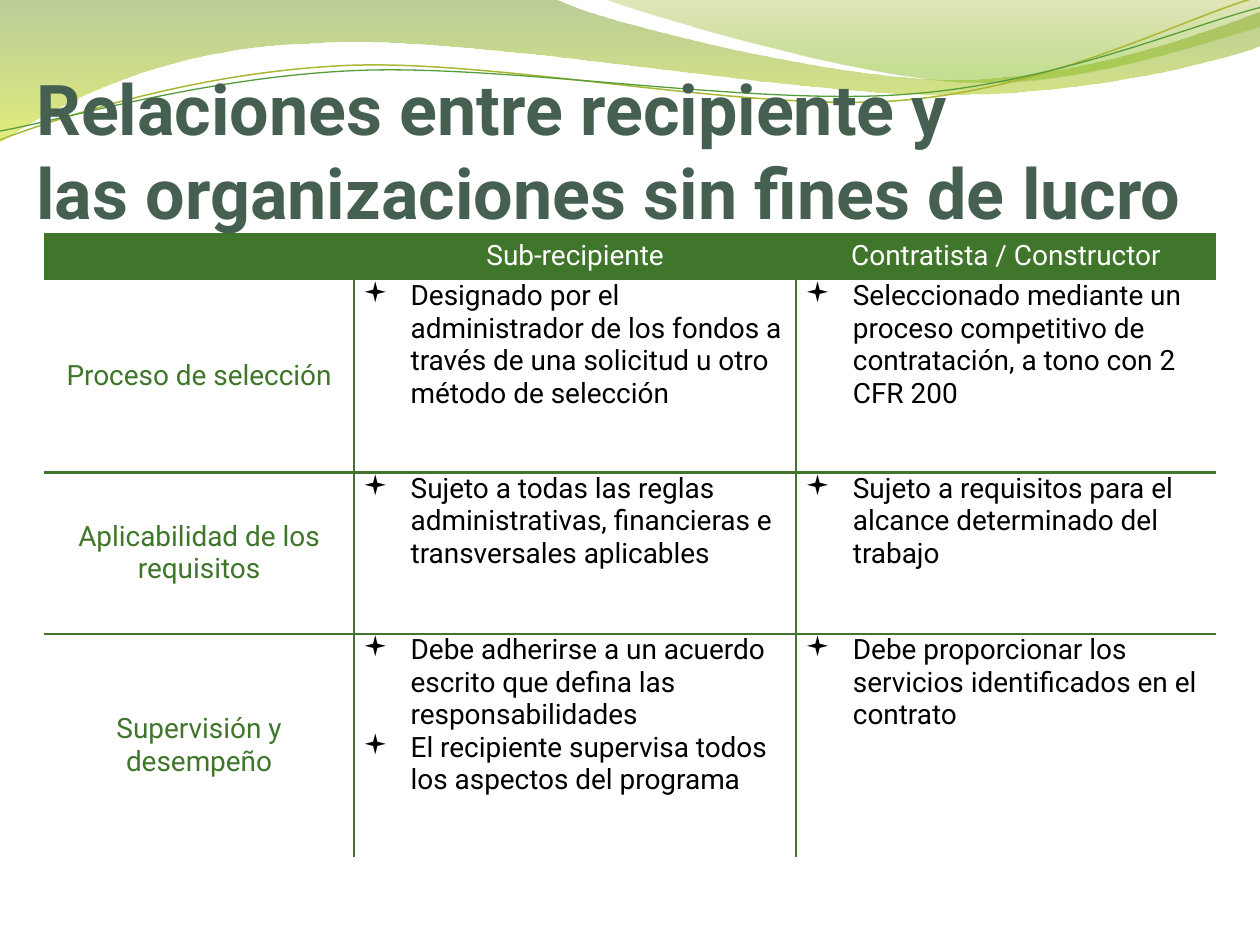
from lxml.etree import SubElement as Sub
from pptx import Presentation
from pptx.dml.color import RGBColor
from pptx.enum.text import MSO_ANCHOR as Anchor, PP_ALIGN as Align
from pptx.oxml import parse_xml
from pptx.oxml.ns import nsdecls, qn
from pptx.util import Inches, Pt

FONT, GREEN = "Roboto", "3F762B"
TITLE = "Relaciones entre recipiente y\vlas organizaciones sin fines de lucro"
HEAD = ["", "Sub-recipiente", "Contratista / Constructor"]
ROWS = [
    ("Proceso de selección",
     ["Designado por el administrador de los fondos a través de una solicitud u otro método de selección"],
     ["Seleccionado mediante un proceso competitivo de contratación, a tono con 2 CFR 200"]),
    ("Aplicabilidad de los requisitos",
     ["Sujeto a todas las reglas administrativas, financieras e transversales aplicables"],
     ["Sujeto a requisitos para el alcance determinado del trabajo"]),
    ("Supervisión y desempeño",
     ["Debe adherirse a un acuerdo escrito que defina las responsabilidades",
      "El recipiente supervisa todos los aspectos del programa"],
     ["Debe proporcionar los servicios identificados en el contrato"]),
]
WIDTHS = [2.46, 3.51, 3.33]
HEIGHTS = [0.37, 1.53, 1.28, 1.77]
NO_GRID = "{2D5ABB26-0587-4C30-8999-92F81FD0307C}"

BANDS = [
    ([(0, 0), (4.4, -0.01), (4.75, 0.17, 6.63, 0.63, 7.58, 0.63),
      (8.53, 0.63, 9.58, 0.26, 10, 0.09), (10.01, 0.36),
      (9.83, 0.44, 8.69, 0.76, 7.46, 0.75), (6.22, 0.75, 3.81, 0.28, 2.57, 0.34),
      (1.29, 0.36, 0.46, 0.83, -0.01, 1.13)],
     [(0, "69921C", 45), (1, "CCE10F", 55)]),
    ([(4.79, -0.01), (5.09, 0.11, 6.82, 0.62, 7.68, 0.65),
      (8.55, 0.69, 9.61, 0.32, 10, 0.21), (10, 0)],
     [(0, "9BAA1A", 30), (0.8, "81BA16", 45)]),
]
WAVES = [
    ([(0, 1.11), (0.48, 0.93, 1.57, 0.57, 2.76, 0.52),
      (3.95, 0.47, 5.92, 0.89, 7.12, 0.8), (8.33, 0.71, 9.38, 0.15, 9.97, -0.02)],
     "A9B733", 0.85),
    ([(0, 1.04), (0.47, 0.96, 1.63, 0.61, 2.83, 0.56),
      (4.02, 0.51, 5.97, 0.84, 7.17, 0.75), (8.36, 0.67, 9.41, 0.21, 10, 0.06)],
     "549E39", 0.75),
]


def rgb(code):
    return RGBColor.from_string(code)


def outline(steps, close):
    dots = [(Inches(s[-2]), Inches(s[-1])) for s in steps]
    pen = slide.shapes.build_freeform(*dots[0], scale=1.0)
    pen.add_line_segments(dots[1:], close=close)
    shape = pen.convert_to_shape()
    shape.shadow.inherit = False
    lines = list(shape._element.iter(qn("a:lnTo")))
    for line, step in zip(lines, steps[1:]):
        if len(step) == 6:
            bend(shape, line, step)
    return shape


def bend(shape, line, step):
    line.tag = qn("a:cubicBezTo")
    for at in (0, 2):
        dot = line.makeelement(qn("a:pt"))
        dot.set("x", str(Inches(step[at]) - shape.left))
        dot.set("y", str(Inches(step[at + 1]) - shape.top))
        line.insert(at // 2, dot)


def style(para, size, color, bold=False):
    para.font.name, para.font.size, para.font.bold = FONT, Pt(size), bold
    para.font.color.rgb = rgb(color)


def bullet(para):
    props = para._p.get_or_add_pPr()
    props.set("marL", str(Inches(0.38)))
    props.set("indent", str(-Inches(0.38)))
    Sub(props, qn("a:buFont")).set("typeface", "Wingdings")
    Sub(props, qn("a:buChar")).set("char", "▪")


def border(cell, sides):
    props = cell._tc.get_or_add_tcPr()
    for at, side in enumerate(sides):
        props.insert(at, parse_xml(
            f'<a:ln{side} {nsdecls("a")} w="{Pt(1.5)}"><a:solidFill>'
            f'<a:srgbClr val="{GREEN}"/></a:solidFill></a:ln{side}>'))


def write(cell, items, color, listed=False):
    cell.margin_left = cell.margin_right = Inches(0.07)
    cell.margin_top = cell.margin_bottom = 0
    cell.vertical_anchor = Anchor.TOP if listed else Anchor.MIDDLE
    cell.text_frame.text = "\n".join(items)
    for para in cell.text_frame.paragraphs:
        if listed:
            bullet(para)
        else:
            para.alignment = Align.CENTER
        style(para, 16, color)


deck = Presentation()
deck.slide_width, deck.slide_height = Inches(10), Inches(7.5)
slide = deck.slides.add_slide(deck.slide_layouts[6])

for steps, stops in BANDS:
    band = outline(steps, True)
    band.line.fill.background()
    band.fill.gradient()
    band.fill.gradient_angle = 270
    for stop, (place, color, alpha) in zip(band.fill.gradient_stops, stops):
        stop.position = place
        stop.color.rgb = rgb(color)
    tints = band._element.spPr.iter(qn("a:srgbClr"))
    for tint, (place, color, alpha) in zip(tints, stops):
        Sub(tint, qn("a:alpha")).set("val", str(alpha * 1000))

for steps, color, width in WAVES:
    wave = outline(steps, False)
    wave.fill.background()
    wave.line.color.rgb = rgb(color)
    wave.line.width = Pt(width)

frame = slide.shapes.add_table(
    len(HEIGHTS), len(WIDTHS), Inches(0.35), Inches(1.85),
    Inches(sum(WIDTHS)), Inches(sum(HEIGHTS)))
table = frame.table
table.first_row = table.horz_banding = False
table._tbl.tblPr.find(qn("a:tableStyleId")).text = NO_GRID
for col, width in zip(table.columns, WIDTHS):
    col.width = Inches(width)
for row, height in zip(table.rows, HEIGHTS):
    row.height = Inches(height)

for c, label in enumerate(HEAD):
    cell = table.cell(0, c)
    cell.fill.solid()
    cell.fill.fore_color.rgb = rgb(GREEN)
    write(cell, [label], "FFFFFF")

for r, (label, *lists) in enumerate(ROWS, 1):
    for c, items in enumerate([[label], *lists]):
        cell = table.cell(r, c)
        cell.fill.background()
        write(cell, items, "000000" if c else GREEN, c > 0)
        inner = {"L": c > 0, "R": c < len(lists), "T": r > 1, "B": r < len(ROWS)}
        border(cell, [side for side, drawn in inner.items() if drawn])

title = slide.shapes.add_textbox(Inches(0.29), Inches(0.83), Inches(9.54), Inches(1.02))
text = title.text_frame
text.word_wrap = True
text.vertical_anchor = Anchor.BOTTOM
text.margin_left = text.margin_right = text.margin_bottom = 0
text.margin_top = Inches(0.05)
text.text = TITLE
style(text.paragraphs[0], 40, "455F51", True)

deck.save("out.pptx")
